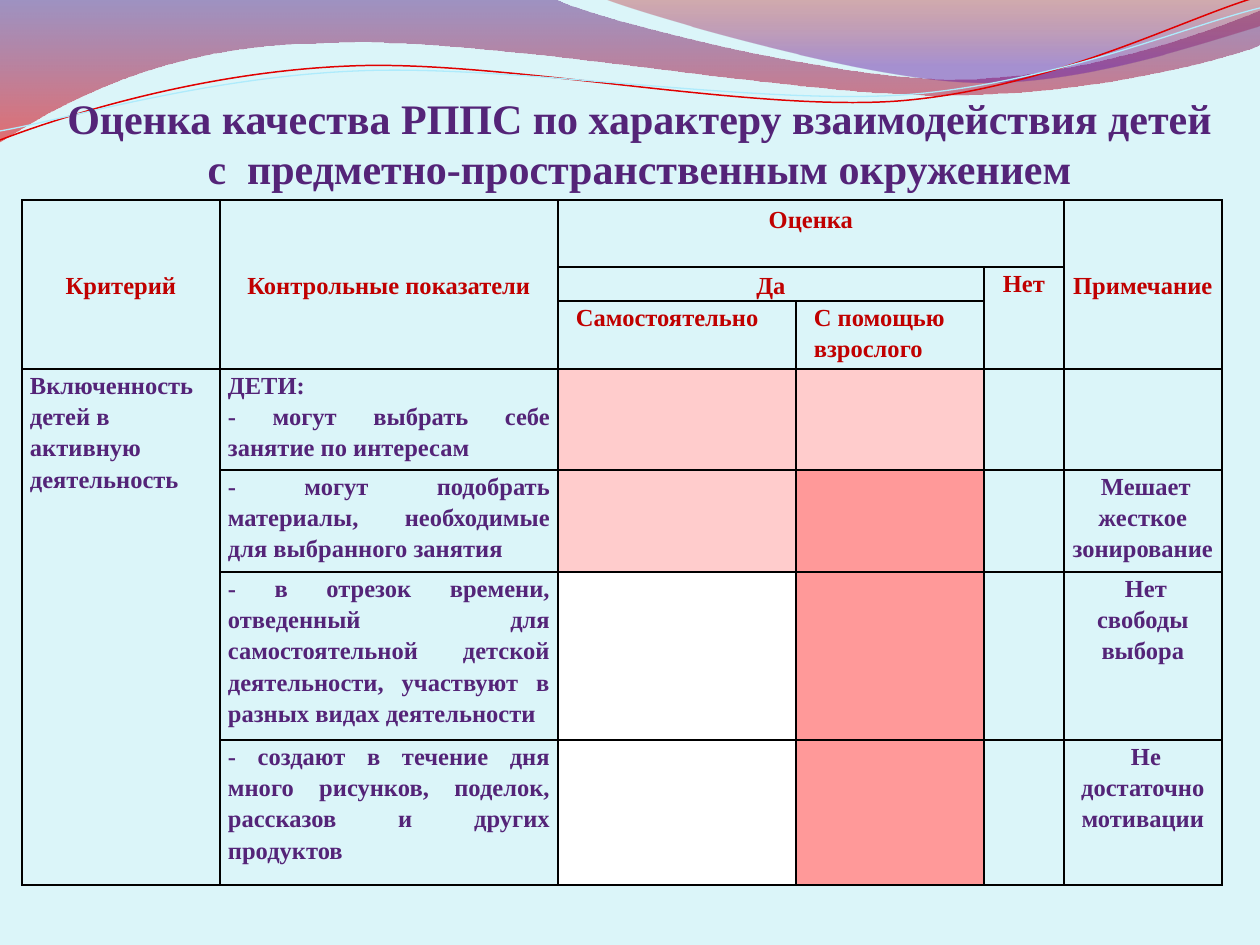
from lxml import etree
from pptx import Presentation
from pptx.dml.color import RGBColor
from pptx.enum.text import MSO_ANCHOR, PP_ALIGN
from pptx.oxml.ns import qn
from pptx.util import Pt

EMU_PER_PX = 914400 / 126
PAGE_WIDTH, PAGE_HEIGHT = 1260, 945
FONT = "Times New Roman"
HARD_SPACE = chr(160)

LEFT, CENTER, JUSTIFY = PP_ALIGN.LEFT, PP_ALIGN.CENTER, PP_ALIGN.JUSTIFY
TOP, MIDDLE = MSO_ANCHOR.TOP, MSO_ANCHOR.MIDDLE

SKY = RGBColor(0xDB, 0xF5, 0xF9)
PURPLE = RGBColor(0x54, 0x24, 0x78)
CRIMSON = RGBColor(0xC0, 0x00, 0x00)
PINK = RGBColor(0xFF, 0xCC, 0xCC)
CORAL = RGBColor(0xFF, 0x99, 0x99)
WHITE = RGBColor(0xFF, 0xFF, 0xFF)
BAND_VIOLET = RGBColor(0x54, 0x1B, 0x7F)
BAND_RED = RGBColor(0xE7, 0x00, 0x00)
CREST_RED = RGBColor(0xBD, 0x00, 0x00)
CREST_VIOLET = RGBColor(0x66, 0x17, 0xA1)
LINE_RED = RGBColor(0xE1, 0x00, 0x00)
LINE_BLUE = RGBColor(0xAE, 0xEB, 0xFC)

TITLE = ("Оценка качества РППС по характеру взаимодействия детей "
         "с  предметно-пространственным окружением")

BANDS = [
    ([(0, -1), (554, -1), (600, 21, 837, 79, 955, 79),
      (1074, 79, 1207, 33, 1260, 11), (1261, 45),
      (1239, 55, 1096, 96, 940, 95), (784, 95, 481, 35, 324, 43),
      (163, 44, 58, 105, -1, 142)],
     [(0, BAND_VIOLET, 45), (1, BAND_RED, 55)]),
    ([(604, -1), (641, 14, 859, 78, 969, 82),
      (1079, 87, 1211, 40, 1260, 26), (1260, 0)],
     [(0, CREST_RED, 30), (0.8, CREST_VIOLET, 45)]),
]
WAVE_LINES = [
    ([(0, 140), (60, 117, 199, 72, 349, 66), (498, 59, 747, 112, 898, 101),
      (1050, 89, 1182, 19, 1257, -3)], LINE_RED, 0.85),
    ([(0, 131), (59, 121, 207, 77, 357, 71), (508, 64, 752, 105, 903, 95),
      (1053, 84, 1186, 26, 1260, 8)], LINE_BLUE, 0.75),
]

COLUMNS = [198, 338, 238, 188, 80, 158]
ROWS = [67, 34, 68, 101, 102, 168, 145]
MERGES = [(0, 0, 2, 0), (0, 1, 2, 1), (0, 2, 0, 4), (0, 5, 2, 5),
          (1, 2, 1, 3), (1, 4, 2, 4), (3, 0, 6, 0)]
HEADINGS = [
    (0, 0, "Критерий", CENTER, MIDDLE),
    (0, 1, "Контрольные показатели", CENTER, MIDDLE),
    (0, 2, "Оценка", CENTER, TOP),
    (0, 5, "Примечание", CENTER, MIDDLE),
    (1, 2, "Да", CENTER, MIDDLE),
    (1, 4, "Нет", CENTER, TOP),
    (2, 2, "Самостоятельно", LEFT, TOP),
    (2, 3, "С помощью\nвзрослого", LEFT, TOP),
]
CRITERION = "Включенность детей в активную деятельность"
INDICATORS = [
    ("ДЕТИ:\n- могут выбрать себе занятие по интересам", PINK, PINK, ""),
    ("- могут подобрать материалы, необходимые для выбранного занятия",
     PINK, CORAL, "Мешает жесткое зонирование"),
    ("- в отрезок времени, отведенный для самостоятельной детской "
     "деятельности, участвуют в разных видах деятельности",
     WHITE, CORAL, "Нет свободы выбора"),
    ("- создают в течение дня много рисунков, поделок, рассказов "
     "и других продуктов", WHITE, CORAL, "Не достаточно мотивации"),
]


def px(length):
    return round(length * EMU_PER_PX)


def write(frame, text, size=14, color=PURPLE, align=LEFT, spacing=1.15):
    for index, line in enumerate(text.split("\n")):
        para = frame.add_paragraph() if index else frame.paragraphs[0]
        para.alignment = align
        para.line_spacing = spacing
        para.space_before = para.space_after = Pt(0)
        span = para.add_run()
        span.text = line
        span.font.name = FONT
        span.font.size = Pt(size)
        span.font.bold = True
        span.font.color.rgb = color


def add_outline(page, left, top, steps, closed):
    anchors = [(px(left + step[-2]), px(top + step[-1])) for step in steps]
    builder = page.shapes.build_freeform(*anchors[0])
    builder.add_line_segments(anchors[1:], close=closed)
    outline = builder.convert_to_shape()
    outline.shadow.inherit = False
    segments = list(outline._element.spPr.iter(qn("a:lnTo")))
    for segment, step in zip(segments, steps[1:]):
        if len(step) == 2:
            continue
        curve = etree.Element(qn("a:cubicBezTo"))
        for x, y in zip(step[::2], step[1::2]):
            etree.SubElement(curve, qn("a:pt"),
                             x=str(px(left + x) - outline.left),
                             y=str(px(top + y) - outline.top))
        segment.getparent().replace(segment, curve)
    return outline


def add_waves(page, left, top):
    for steps, stops in BANDS:
        band = add_outline(page, left, top, steps, True)
        band.line.fill.background()
        band.fill.gradient()
        band.fill.gradient_angle = 270
        for stop, (position, color, opacity) in zip(band.fill.gradient_stops, stops):
            stop.position = position
            stop.color.rgb = color
        for tint, (position, color, opacity) in zip(
                band._element.spPr.iter(qn("a:srgbClr")), stops):
            etree.SubElement(tint, qn("a:alpha"), val=str(opacity * 1000))
    for steps, color, width in WAVE_LINES:
        wave = add_outline(page, left, top, steps, False)
        wave.fill.background()
        wave.line.color.rgb = color
        wave.line.width = Pt(width)


def add_title(page, left, top, width, height):
    title = page.shapes.title
    title.left, title.top, title.width, title.height = map(
        px, (left, top, width, height))
    frame = title.text_frame
    frame.word_wrap = True
    frame.vertical_anchor = TOP
    frame.margin_left = frame.margin_right = px(6)
    frame.margin_top = frame.margin_bottom = px(6)
    write(frame, TITLE, size=24, align=CENTER, spacing=1.0)
    page.shapes._spTree.append(title._element)


def add_borders(cell):
    props = cell._tc.get_or_add_tcPr()
    for side in ("lnL", "lnR", "lnT", "lnB"):
        border = etree.SubElement(props, qn(f"a:{side}"), w=str(Pt(1)))
        fill = etree.SubElement(border, qn("a:solidFill"))
        etree.SubElement(fill, qn("a:srgbClr"), val="000000")


def add_assessment(page, left, top):
    table = page.shapes.add_table(
        len(ROWS), len(COLUMNS), px(left), px(top),
        px(sum(COLUMNS)), px(sum(ROWS))).table
    table.first_row = table.horz_banding = False
    for column, width in zip(table.columns, COLUMNS):
        column.width = px(width)
    for row, height in zip(table.rows, ROWS):
        row.height = px(height)
    for cell in table.iter_cells():
        add_borders(cell)
        cell.fill.background()
        cell.margin_left = cell.margin_right = px(8)
        cell.margin_top = cell.margin_bottom = 0
    for row, column, last_row, last_column in MERGES:
        table.cell(row, column).merge(table.cell(last_row, last_column))
    for row, column, text, align, anchor in HEADINGS:
        cell = table.cell(row, column)
        cell.vertical_anchor = anchor
        if align == LEFT:
            cell.margin_left = px(18)
        write(cell.text_frame, text, color=CRIMSON, align=align)
    table.cell(0, 2).margin_top = px(3)
    write(table.cell(3, 0).text_frame, CRITERION)
    for row, (indicator, alone, helped, note) in enumerate(INDICATORS, 3):
        write(table.cell(row, 1).text_frame, indicator, align=JUSTIFY)
        for column, color in ((2, alone), (3, helped)):
            fill = table.cell(row, column).fill
            fill.solid()
            fill.fore_color.rgb = color
        if note:
            write(table.cell(row, 5).text_frame, HARD_SPACE + note, align=CENTER)


def main():
    deck = Presentation()
    deck.slide_width, deck.slide_height = px(PAGE_WIDTH), px(PAGE_HEIGHT)
    page = deck.slides.add_slide(deck.slide_layouts[5])
    page.background.fill.solid()
    page.background.fill.fore_color.rgb = SKY
    add_waves(page, 0, 0)
    add_title(page, 54, 86, 1171, 115)
    add_assessment(page, 22, 200)
    deck.save("out.pptx")


if __name__ == "__main__":
    main()
